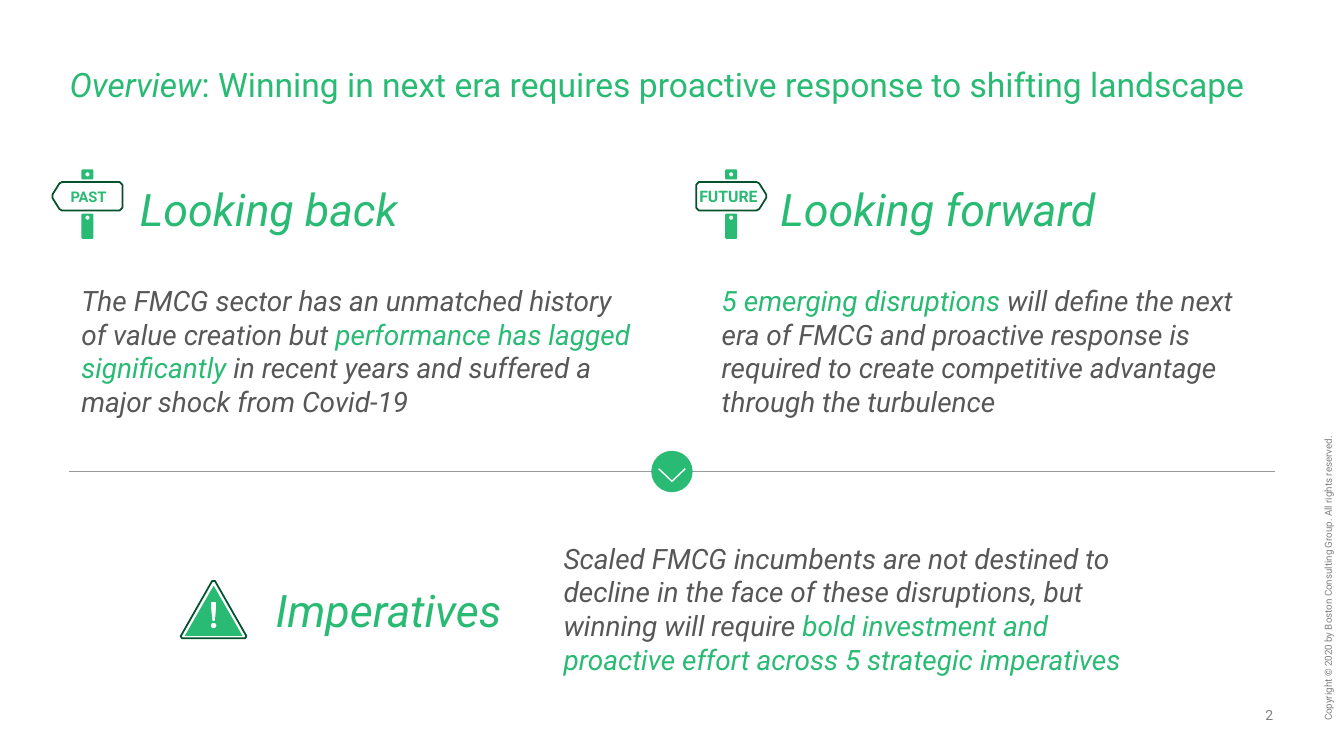
"""Builds the overview slide: looking back, looking forward and the imperatives."""
import math

import pptx
import pptx.dml.color
import pptx.enum.shapes
import pptx.enum.text
import pptx.oxml
import pptx.util
from pptx.oxml import ns

Pt = pptx.util.Pt
ANCHOR = pptx.enum.text.MSO_ANCHOR
ALIGN = pptx.enum.text.PP_ALIGN

COLORS = {"green": "29BA74", "dark": "03522D", "text": "575757",
          "muted": "808080", "rule": "9A9A9A", "white": "FFFFFF"}
FONT = "Roboto"

TITLE = [("Overview", "green", True),
         (": Winning in next era requires proactive response to shifting landscape", "green", False)]
COLUMNS = [
    {"left": 49.4, "sign": "PAST", "sign_size": 10.5, "sign_insets": (1.5, 0, 0, 0),
     "sign_center": 62.5, "points_right": False, "heading": "Looking back",
     "body": [("The FMCG sector has an unmatched history of value creation but ", "text", True),
              ("performance has lagged significantly", "green", True),
              (" in recent years and suffered a major shock from Covid-19", "text", True)]},
    {"left": 506.9, "sign": "FUTURE", "sign_size": 11.3, "sign_insets": (0, 0, 4, 0),
     "sign_center": 522.3, "points_right": True, "heading": "Looking forward",
     "body": [("5 emerging disruptions ", "green", True),
              ("will define the next era of FMCG and proactive response is required to create "
               "competitive advantage through the turbulence", "text", True)]},
]
IMPERATIVES = "Imperatives"
IMPERATIVES_BODY = [
    ("Scaled FMCG incumbents are not destined to decline in the face of these disruptions, "
     "but winning will require ", "text", True),
    ("bold investment and proactive effort across 5 strategic imperatives", "green", True)]
PAGE_NUMBER = "2"
COPYRIGHT = "Copyright © 2020 by Boston Consulting Group. All rights reserved."

SIGN_WIDTH, SIGN_TOP = 50, 130
SIGN_OUTLINE = [(0, 2), (2, 0), (43, 0), (45, 1), (50, 9), (50, 11.4),
                (45, 19.4), (43, 20.4), (2, 20.4), (0, 18.4)]
POST_HALF, POST_CORNER, HOLE_RADIUS = 4.3, 0.7, 1.5
POST_PARTS = [(121, 128.2, 124.6), (152.6, 170.6, 155.5)]
DIVIDER_LEFT, DIVIDER_RIGHT, DIVIDER_Y = 49.4, 910.8, 336.8
WARNING_X = 152.6
WARNING_OUTLINE = [(-1, 415), (1, 415), (23.5, 454.5), (22.5, 456), (-22.5, 456), (-23.5, 454.5)]
WARNING_FILL = [(0, 418.3), (20.6, 454.1), (-20.6, 454.1)]
WARNING_BAR = [(-1.7, 430), (-1.7, 435), (-0.9, 443.5), (0.9, 443.5), (1.7, 435), (1.7, 430)]
WARNING_DOT_Y, WARNING_DOT_RADIUS = 446.8, 2

prs = pptx.Presentation()
prs.slide_width, prs.slide_height = Pt(960), Pt(540)
slide = prs.slides.add_slide(prs.slide_layouts[6])


def rgb(name):
    return pptx.dml.color.RGBColor.from_string(COLORS[name])


def write(shape, runs, size=20, bold=False, align=ALIGN.LEFT, anchor=ANCHOR.TOP,
          spacing=1.0, insets=(0, 0, 0, 0), wrap=True):
    frame = shape.text_frame
    frame.word_wrap = wrap
    frame.vertical_anchor = anchor
    (frame.margin_left, frame.margin_top,
     frame.margin_right, frame.margin_bottom) = [Pt(inset) for inset in insets]
    paragraph = frame.paragraphs[0]
    paragraph.alignment = align
    paragraph.line_spacing = spacing
    for words, color, italic in runs:
        run = paragraph.add_run()
        run.text = words
        run.font.name, run.font.size = FONT, Pt(size)
        run.font.bold, run.font.italic = bold, italic
        run.font.color.rgb = rgb(color)


def box(left, top, width, height):
    return slide.shapes.add_textbox(Pt(left), Pt(top), Pt(width), Pt(height))


def paint(shape, fill=None, line=None, weight=0.75):
    shape.shadow.inherit = False
    if fill:
        shape.fill.solid()
        shape.fill.fore_color.rgb = rgb(fill)
    else:
        shape.fill.background()
    if line:
        shape.line.color.rgb = rgb(line)
        shape.line.width = Pt(weight)
    else:
        shape.line.fill.background()
    return shape


def ring(y, radius):
    angles = [-math.tau * step / 16 for step in range(16)]
    return [(radius * math.cos(angle), y + radius * math.sin(angle)) for angle in angles]


def post_part(top, bottom):
    side, cut = POST_HALF, POST_CORNER
    return [(cut - side, top), (side - cut, top), (side, top + cut), (side, bottom - cut),
            (side - cut, bottom), (cut - side, bottom), (-side, bottom - cut), (-side, top + cut)]


def outline(*contours, center=0, top=0, close=True, **look):
    placed = [[(Pt(center + x), Pt(top + y)) for x, y in points] for points in contours]
    builder = slide.shapes.build_freeform(*placed[0][0], scale=1.0)
    for index, points in enumerate(placed):
        if index:
            builder.move_to(*points[0])
        builder.add_line_segments(points[1:], close=close)
    return paint(builder.convert_to_shape(), **look)


def draw_sign(label, size, insets, center, points_right):
    contours = []
    for top, bottom, hole_y in POST_PARTS:
        contours += [post_part(top, bottom), ring(hole_y, HOLE_RADIUS)]
    outline(*contours, center=center, fill="green")
    direction = 1 if points_right else -1
    points = [(direction * (x - SIGN_WIDTH / 2), y) for x, y in SIGN_OUTLINE]
    board = outline(points, center=center, top=SIGN_TOP, line="dark", weight=1.25)
    write(board, [(label, "green", False)], size=size, bold=True, insets=insets,
          align=ALIGN.CENTER, anchor=ANCHOR.MIDDLE, wrap=False)


def draw_divider():
    rule = slide.shapes.add_connector(
        pptx.enum.shapes.MSO_CONNECTOR.STRAIGHT,
        Pt(DIVIDER_LEFT), Pt(DIVIDER_Y), Pt(DIVIDER_RIGHT), Pt(DIVIDER_Y))
    rule.line.color.rgb = rgb("rule")
    rule.line.width = Pt(0.75)
    rule._element.spPr.append(pptx.oxml.parse_xml(f'<a:effectLst {ns.nsdecls("a")}/>'))
    disc = slide.shapes.add_shape(pptx.enum.shapes.MSO_SHAPE.OVAL, Pt(465.6),
                                  Pt(DIVIDER_Y - 14.4), Pt(28.8), Pt(28.8))
    paint(disc, fill="green", line="green")
    outline([(-9.5, -2), (0, 7), (9.5, -2)], center=480, top=DIVIDER_Y, close=False,
            line="white", weight=1)


def draw_warning():
    outline(WARNING_OUTLINE, center=WARNING_X, line="dark", weight=1.25)
    outline(WARNING_FILL, WARNING_BAR, ring(WARNING_DOT_Y, WARNING_DOT_RADIUS),
            center=WARNING_X, fill="green")


def main():
    write(box(49.7, 49, 874, 26), TITLE, size=24, spacing=0.9)
    for column in COLUMNS:
        draw_sign(column["sign"], column["sign_size"], column["sign_insets"],
                  column["sign_center"], column["points_right"])
        write(box(column["left"] + 50.6, 126, 352, 45), [(column["heading"], "green", True)],
              size=32, insets=(0, 3.6, 0, 3.6))
        write(box(column["left"], 202.7, 403, 97), column["body"], insets=(8.64, 0, 0, 0))
    draw_divider()
    draw_warning()
    write(box(196.9, 416, 185, 38.5), [(IMPERATIVES, "green", True)],
          size=32, anchor=ANCHOR.BOTTOM)
    write(box(386.7, 383, 453, 104), IMPERATIVES_BODY, insets=(15.84, 3.6, 7.2, 3.6))
    write(box(879, 504.6, 30.4, 12.2), [(PAGE_NUMBER, "muted", False)],
          size=10, align=ALIGN.RIGHT, anchor=ANCHOR.BOTTOM)
    copyright_line = box(747.4, 308.9, 404, 8)
    copyright_line.rotation = 270
    write(copyright_line, [(COPYRIGHT, "muted", False)], size=7, spacing=0.9)
    prs.save("out.pptx")


if __name__ == "__main__":
    main()
